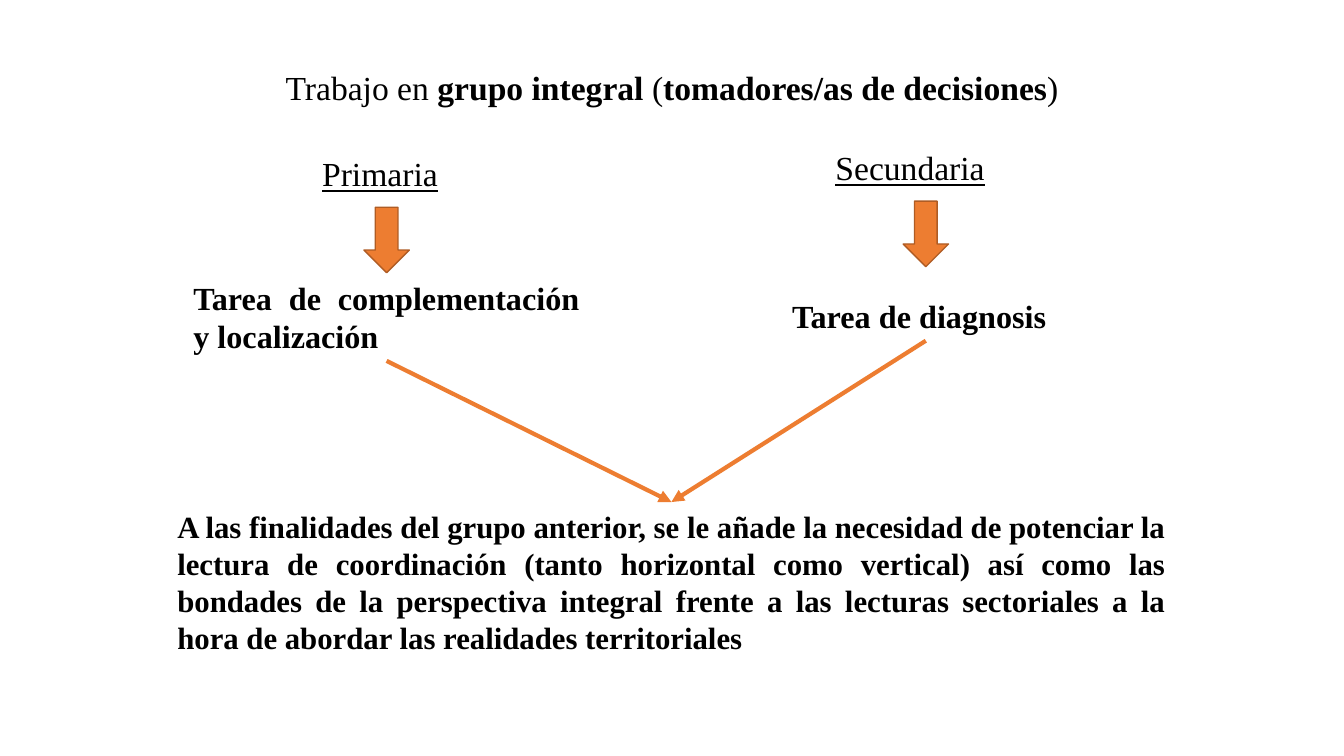
import pptx
import pptx.util
import pptx.dml.color
import pptx.enum.shapes
import pptx.enum.text
import pptx.oxml
import pptx.oxml.ns

Pt = pptx.util.Pt
ALIGN = pptx.enum.text.PP_ALIGN
ANCHOR = pptx.enum.text.MSO_ANCHOR
ORANGE = "ED7D31"


def color(target, value):
    target.rgb = pptx.dml.color.RGBColor.from_string(value)


def place(part, box):
    part.left, part.top, part.width, part.height = [Pt(length) for length in box]


def write(part, runs, size, align, anchor, underline=False):
    frame = part.text_frame
    frame.word_wrap = True
    frame.auto_size = pptx.enum.text.MSO_AUTO_SIZE.NONE
    frame.vertical_anchor = anchor
    paragraph = frame.paragraphs[0]
    paragraph.alignment = align
    for words, bold in runs:
        run = paragraph.add_run()
        run.text = words
        run.font.name = "Times New Roman"
        run.font.size = Pt(size)
        run.font.bold = bold
        run.font.underline = underline
        color(run.font.color, "000000")


def add_text(slide, box, words, size, bold, anchor, underline=False):
    part = slide.shapes.add_textbox(*[Pt(length) for length in box])
    write(part, [(words, bold)], size, ALIGN.JUSTIFY, anchor, underline)
    return part


def add_heading(slide, box):
    heading = slide.shapes.title
    place(heading, box)
    runs = [
        ("Trabajo en ", False),
        ("grupo integral ", True),
        ("(", False),
        ("tomadores/as de decisiones", True),
        (")", False),
    ]
    write(heading, runs, 24, ALIGN.CENTER, ANCHOR.TOP)


def add_branch(slide, box, stage, stage_inset, stage_width, task, task_height):
    left, top, width, height = box
    stage_box = (left + stage_inset, top, stage_width, 36.7)
    add_text(slide, stage_box, stage, 24, False, ANCHOR.TOP, True)

    arrow_width = 32.4
    arrow = slide.shapes.add_shape(
        pptx.enum.shapes.MSO_SHAPE.DOWN_ARROW,
        Pt(left + (width - arrow_width) / 2), Pt(top + 42), Pt(arrow_width), Pt(46.8))
    arrow.shadow.inherit = False
    arrow.fill.solid()
    color(arrow.fill.fore_color, ORANGE)
    color(arrow.line.color, "AF5C24")
    arrow.line.width = Pt(1)

    task_box = (left, top + height - task_height, width, task_height)
    return add_text(slide, task_box, task, 23, True, ANCHOR.MIDDLE)


def add_conclusion(slide, box):
    words = (
        "A las finalidades del grupo anterior, se le añade la necesidad de potenciar "
        "la lectura de coordinación (tanto horizontal como vertical) así como las "
        "bondades de la perspectiva integral frente a las lecturas sectoriales a la "
        "hora de abordar las realidades territoriales"
    )
    return add_text(slide, box, words, 22, True, ANCHOR.MIDDLE)


def join(slide, task, conclusion):
    link = slide.shapes.add_connector(
        pptx.enum.shapes.MSO_CONNECTOR.STRAIGHT, 0, 0, 0, 0)
    link.begin_connect(task, 2)
    link.end_connect(conclusion, 0)
    color(link.line.color, ORANGE)
    link.line.width = Pt(3)
    head = pptx.oxml.parse_xml(
        f'<a:tailEnd {pptx.oxml.ns.nsdecls("a")} type="triangle"/>')
    link.line._get_or_add_ln().append(head)
    effects = pptx.oxml.parse_xml(f'<a:effectLst {pptx.oxml.ns.nsdecls("a")}/>')
    link._element.spPr.append(effects)


def main():
    deck = pptx.Presentation()
    deck.slide_width, deck.slide_height = Pt(960), Pt(540)
    slide = deck.slides.add_slide(deck.slide_layouts[5])
    slide.background.fill.solid()
    color(slide.background.fill.fore_color, "FFFFFF")

    add_heading(slide, (120, 44, 720, 36))
    primary = add_branch(
        slide, (131, 106, 290.4, 151.8), "Primaria", 92, 106,
        "Tarea de complementación y localización", 63.4)
    secondary = add_branch(
        slide, (558.7, 101.7, 205.2, 141.7), "Secundaria", 31, 142.6,
        "Tarea de diagnosis", 35.3)
    conclusion = add_conclusion(slide, (119.6, 358.6, 720, 113.8))
    for task in (primary, secondary):
        join(slide, task, conclusion)

    deck.save("out.pptx")


if __name__ == "__main__":
    main()
